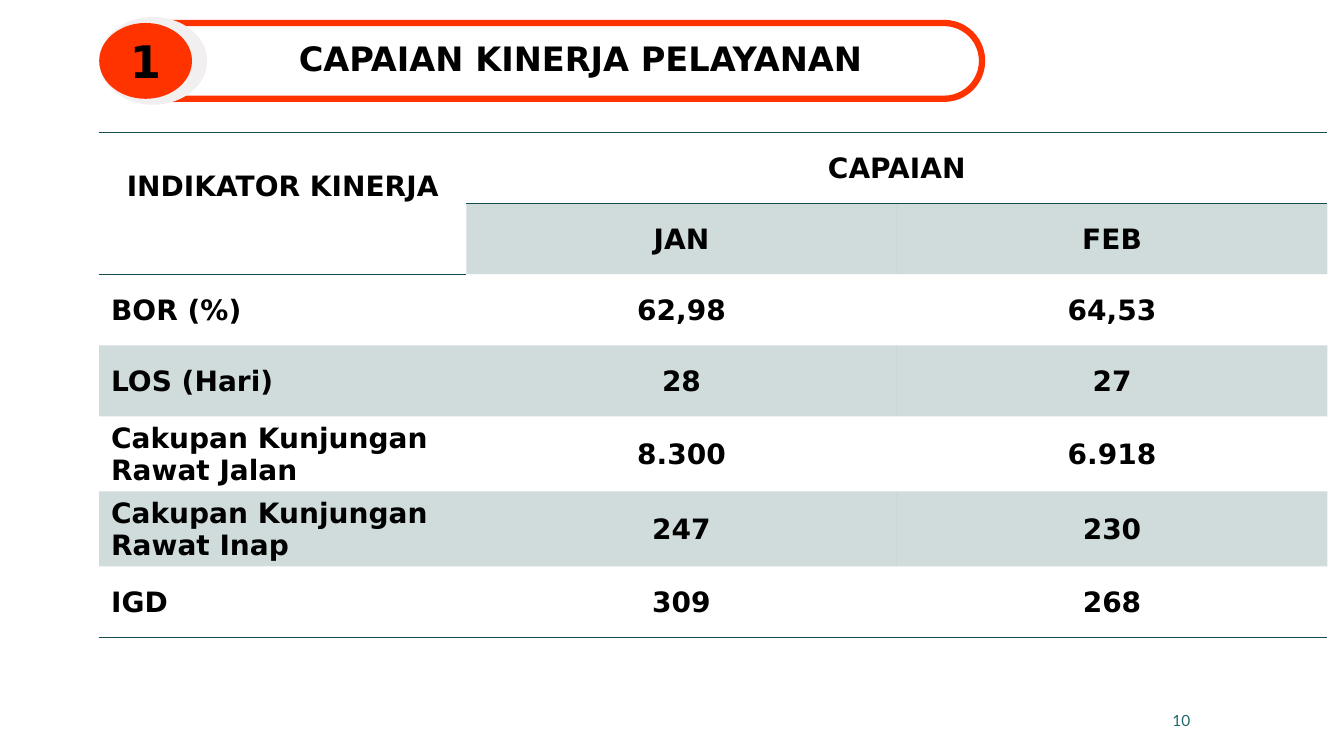
from lxml import etree
from pptx import Presentation, util as u
from pptx.dml.color import RGBColor
from pptx.enum import shapes, text
from pptx.oxml.ns import qn

LEFT, CENTER, RIGHT = text.PP_ALIGN.LEFT, text.PP_ALIGN.CENTER, text.PP_ALIGN.RIGHT
MIDDLE, BOTTOM = text.MSO_ANCHOR.MIDDLE, text.MSO_ANCHOR.BOTTOM
PLAIN_TABLE = "{2D5ABB26-0587-4C30-8999-92F81FD0307C}"


def color(value):
    return RGBColor.from_string(value)


class SlideBuilder:
    font = "DejaVu Sans"
    ink = "000000"
    teal = "164B4F"
    orange = "FF3300"
    halo = "F1EFF0"

    def __init__(self, page):
        self.page = page
        self.badge = page.shapes.add_group_shape()

    def add_words(self, frame, words, size, align=CENTER, font=None, ink=None, bold=True):
        para = frame.paragraphs[0]
        para.alignment = align
        span = para.add_run()
        span.text = words
        span.font.name = font or self.font
        span.font.size = u.Pt(size)
        span.font.bold = bold
        span.font.color.rgb = color(ink or self.ink)
        return para

    def badge_part(self, kind, place, fill=None, line=None):
        part = self.badge.shapes.add_shape(kind, *map(u.Cm, place))
        part.shadow.inherit = False
        if fill:
            part.fill.solid()
            part.fill.fore_color.rgb = color(fill)
        else:
            part.fill.background()
        if line:
            part.line.color.rgb = color(line)
            part.line.width = u.Pt(4.5)
        else:
            part.line.fill.background()
        return part

    def label(self, place, words, size, anchor=MIDDLE, **style):
        box = self.page.shapes.add_textbox(*map(u.Cm, place))
        box.text_frame.word_wrap = True
        box.text_frame.vertical_anchor = anchor
        return self.add_words(box.text_frame, words, size, **style)

    def table(self, left, top, widths, heights):
        frame = self.page.shapes.add_table(
            len(heights), len(widths), u.Cm(left), u.Cm(top),
            u.Cm(sum(widths)), u.Cm(sum(heights)))
        grid = frame.table
        grid.first_row = grid.horz_banding = False
        grid._tbl.tblPr.find(qn("a:tableStyleId")).text = PLAIN_TABLE
        for column, width in zip(grid.columns, widths):
            column.width = u.Cm(width)
        for row, height in zip(grid.rows, heights):
            row.height = u.Cm(height)
        return grid

    def border(self, cell, side):
        line = etree.SubElement(cell._tc.get_or_add_tcPr(), qn(f"a:{side}"), w=str(u.Pt(1)))
        fill = etree.SubElement(line, qn("a:solidFill"))
        etree.SubElement(fill, qn("a:srgbClr"), val=self.teal)

    def cell(self, cell, words, align, margins, sides, tinted):
        for side in sides:
            self.border(cell, side)
        if tinted:
            cell.fill.solid()
            cell.fill.fore_color.rgb = color(self.teal)
            tint = cell._tc.tcPr.find(f"{qn('a:solidFill')}/{qn('a:srgbClr')}")
            etree.SubElement(tint, qn("a:alpha"), val="20000")
        else:
            cell.fill.background()
        cell.vertical_anchor = MIDDLE
        cell.margin_left, cell.margin_top, cell.margin_right, cell.margin_bottom = map(u.Cm, margins)
        if words:
            self.add_words(cell.text_frame, words, 20, align)


def main():
    deck = Presentation()
    deck.slide_width, deck.slide_height = u.Cm(33.87), u.Cm(19.05)
    slide = SlideBuilder(deck.slides.add_slide(deck.slide_layouts[6]))

    oval = shapes.MSO_SHAPE.OVAL
    banner = slide.badge_part(
        shapes.MSO_SHAPE.ROUNDED_RECTANGLE, (2.8, 0.58, 21.95, 1.91), line=slide.orange)
    banner.adjustments[0] = 0.5
    slide.badge_part(oval, (2.5, 0.43, 2.72, 2.21), fill=slide.halo)
    number = slide.badge_part(oval, (2.5, 0.58, 2.34, 1.91), fill=slide.orange)
    number.text_frame.vertical_anchor = MIDDLE
    slide.add_words(number.text_frame, "1", 32)

    title = slide.label((3.71, 0.2, 21.84, 1.91), "CAPAIAN KINERJA PELAYANAN", 24, BOTTOM)
    title.line_spacing = 0.9

    rows = [
        ("INDIKATOR KINERJA", "CAPAIAN", ""),
        ("", "JAN", "FEB"),
        ("BOR (%)", "62,98", "64,53"),
        ("LOS (Hari)", "28", "27"),
        ("Cakupan Kunjungan Rawat Jalan", "8.300", "6.918"),
        ("Cakupan Kunjungan Rawat Inap", "247", "230"),
        ("IGD", "309", "268"),
    ]
    heights = [1.89 if "Cakupan" in row[0] else 1.79 for row in rows]
    grid = slide.table(2.5, 3.33, [9.25, 10.85, 10.85], heights)
    grid.cell(0, 0).merge(grid.cell(1, 0))
    grid.cell(0, 1).merge(grid.cell(0, 2))
    for r, row in enumerate(rows):
        for c, words in enumerate(row):
            heading = c == 0 and r < 2
            sides = ["lnT"] if r == 0 else []
            if heading or r in (0, len(rows) - 1):
                sides.append("lnB")
            if heading:
                margins = (0, 0, 0, 0.84)
            else:
                margins = (0.05 if c else 0.3, 0.05, 0.05, 0)
            align = CENTER if c or heading else LEFT
            slide.cell(grid.cell(r, c), words, align, margins, sides, r % 2 == 1 and not heading)

    slide.label((22.35, 17.65, 7.9, 1.02), "10", 11,
                align=RIGHT, font="Lato", ink="1F696F", bold=False)
    deck.save("out.pptx")


if __name__ == "__main__":
    main()
